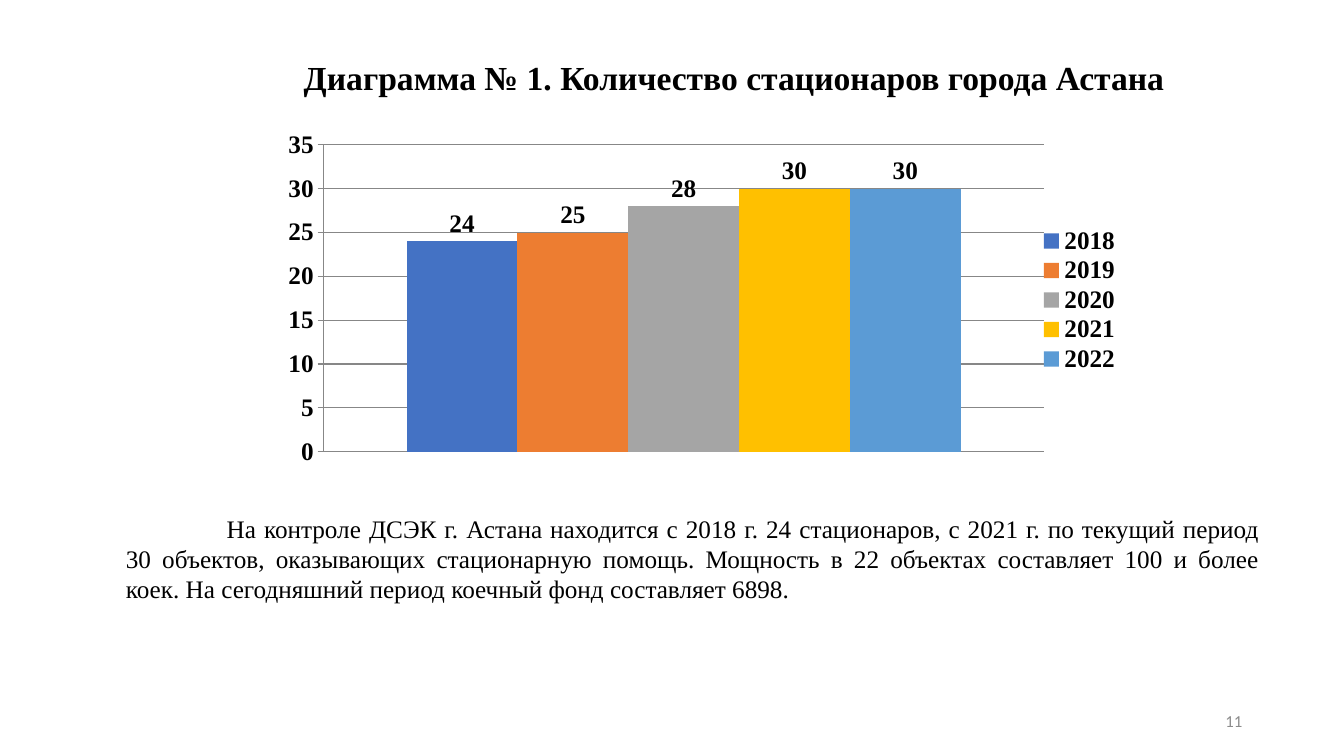
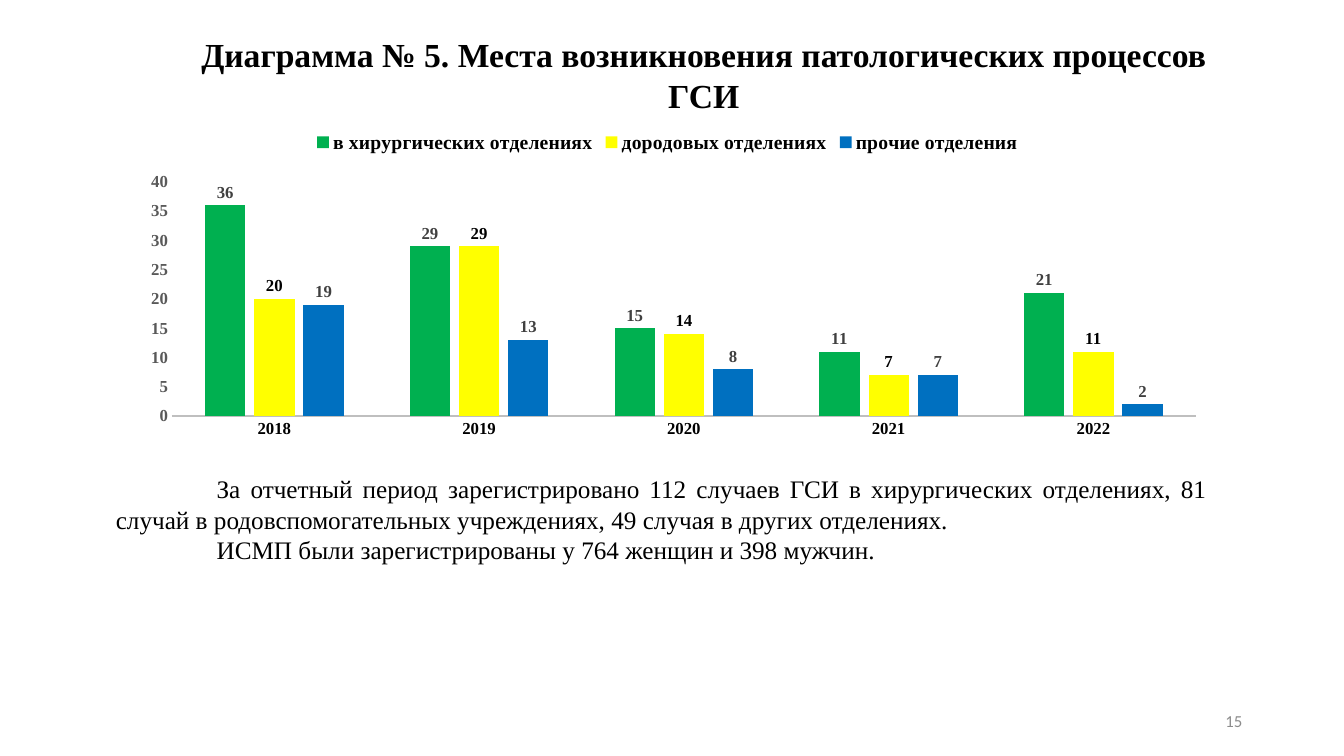
from pptx import Presentation
from pptx.chart.data import CategoryChartData
from pptx.dml.color import RGBColor
from pptx.enum.chart import XL_CHART_TYPE, XL_LABEL_POSITION, XL_LEGEND_POSITION, XL_TICK_MARK
from pptx.enum.text import MSO_ANCHOR, MSO_AUTO_SIZE, PP_ALIGN
from pptx.oxml.ns import qn
from pptx.util import Inches, Pt
from lxml.etree import SubElement

COLORS = {
    "black": "000000", "label": "404040", "axis_text": "595959", "page": "8C8C8C",
    "grid": "878787", "axis": "BFBFBF",
    "azure": "4472C4", "orange": "ED7D31", "silver": "A5A5A5", "gold": "FFC000",
    "sky": "5B9BD5", "green": "00B050", "yellow": "FFFF00", "blue": "0070C0",
}
SERIF = "Times New Roman"
SANS = "Calibri"
PAGE_BOX = (9.42, 6.95, 3, 0.4)

SLIDES = [
    {
        "title": "Диаграмма № 1. Количество стационаров города Астана",
        "title_box": (1, 0.52, 12.07, 0.91),
        "title_indent": 0.49,
        "body": [
            "На контроле ДСЭК г. Астана находится с 2018 г. 24 стационаров, с 2021 г. "
            "по текущий период 30 объектов, оказывающих стационарную помощь. Мощность "
            "в 22 объектах составляет 100 и более коек. На сегодняшний период коечный "
            "фонд составляет 6898.",
        ],
        "body_box": (1.15, 5.04, 11.44, 1.01),
        "page": "11",
        "chart": {
            "box": (2.68, 1.23, 8.82, 3.46),
            "categories": ["1"],
            "series": [
                ("2018", [24], "azure", "black"),
                ("2019", [25], "orange", "black"),
                ("2020", [28], "silver", "black"),
                ("2021", [30], "gold", "black"),
                ("2022", [30], "sky", "black"),
            ],
            "gap": 150, "overlap": 0, "grid": True, "show_categories": False,
            "size": 18, "legend_size": 18, "value_color": "black",
            "legend": XL_LEGEND_POSITION.RIGHT,
            "plot_area": (0.06, 0.06, 0.81, 0.88),
            "legend_area": (0.86, 0.29, 0.1, 0.43),
        },
    },
    {
        "title": "Диаграмма № 5. Места возникновения патологических процессов ГСИ",
        "title_box": (1.73, 0.29, 10.5, 0.91),
        "title_indent": 0,
        "body": [
            "За отчетный период зарегистрировано 112 случаев ГСИ в хирургических "
            "отделениях, 81 случай в родовспомогательных учреждениях, 49 случая "
            "в других отделениях.",
            "ИСМП были зарегистрированы у 764 женщин и 398 мужчин.",
        ],
        "body_box": (1.05, 4.65, 11.02, 1.01),
        "page": "15",
        "chart": {
            "box": (1.16, 1.19, 10.92, 3.23),
            "categories": ["2018", "2019", "2020", "2021", "2022"],
            "series": [
                ("в хирургических отделениях", [36, 29, 15, 11, 21], "green", "label"),
                ("дородовых отделениях", [20, 29, 14, 7, 11], "yellow", "black"),
                ("прочие отделения", [19, 13, 8, 7, 2], "blue", "label"),
            ],
            "gap": 164, "overlap": -22, "grid": False, "show_categories": True,
            "size": 12, "legend_size": 14, "value_color": "axis_text",
            "legend": XL_LEGEND_POSITION.TOP,
            "plot_area": (0.05, 0.19, 0.93, 0.72),
            "legend_area": None,
        },
    },
]


def rgb(name):
    return RGBColor.from_string(COLORS[name])


def style_font(font, size, color="black", bold=False, name=SERIF):
    font.size = Pt(size)
    font.bold = bold
    font.name = name
    font.color.rgb = rgb(color)


def add_text(slide, box, paragraphs, size, align, indent=0, anchor=MSO_ANCHOR.TOP,
             fit=MSO_AUTO_SIZE.NONE, **font_style):
    frame = slide.shapes.add_textbox(*map(Inches, box)).text_frame
    frame.word_wrap = True
    frame.auto_size = fit
    frame.vertical_anchor = anchor
    for index, text in enumerate(paragraphs):
        paragraph = frame.paragraphs[0] if index == 0 else frame.add_paragraph()
        paragraph.alignment = align
        if indent:
            properties = paragraph._p.get_or_add_pPr()
            properties.set("marL", "0")
            properties.set("indent", str(Inches(indent)))
        run = paragraph.add_run()
        run.text = text
        style_font(run.font, size, **font_style)


def set_layout(parent, index, area, inner=False):
    for previous in parent.findall(qn("c:layout")):
        parent.remove(previous)
    layout = SubElement(parent, qn("c:layout"))
    parent.insert(index, layout)
    manual = SubElement(layout, qn("c:manualLayout"))
    settings = [("layoutTarget", "inner")] if inner else []
    settings += [("xMode", "edge"), ("yMode", "edge"), *zip("xywh", area)]
    for tag, value in settings:
        SubElement(manual, qn(f"c:{tag}")).set("val", str(value))


def add_column_chart(slide, content):
    data = CategoryChartData(number_format="0")
    data.categories = content["categories"]
    for name, values, _, _ in content["series"]:
        data.add_series(name, values)
    chart = slide.shapes.add_chart(
        XL_CHART_TYPE.COLUMN_CLUSTERED, *map(Inches, content["box"]), data).chart
    size = content["size"]
    chart.has_title = False
    style_font(chart.font, size, bold=True)

    plot = chart.plots[0]
    plot.vary_by_categories = False
    plot.gap_width = content["gap"]
    plot.overlap = content["overlap"]
    for series, (_, _, fill, label_color) in zip(plot.series, content["series"]):
        series.format.fill.solid()
        series.format.fill.fore_color.rgb = rgb(fill)
        labels = series.data_labels
        labels.show_value = True
        labels.position = XL_LABEL_POSITION.OUTSIDE_END
        style_font(labels.font, size, label_color, True)

    values = chart.value_axis
    style_font(values.tick_labels.font, size, content["value_color"], True)
    values.minimum_scale = 0
    values.major_unit = 5
    values.has_major_gridlines = content["grid"]
    if content["grid"]:
        for line in (values.format.line, values.major_gridlines.format.line):
            line.color.rgb = rgb("grid")
            line.width = Pt(0.75)
        values.major_tick_mark = XL_TICK_MARK.OUTSIDE
    else:
        values.format.line.fill.background()
        values.major_tick_mark = XL_TICK_MARK.NONE

    categories = chart.category_axis
    categories.visible = content["show_categories"]
    if content["show_categories"]:
        categories.major_tick_mark = XL_TICK_MARK.NONE
        categories.format.line.color.rgb = rgb("axis")
        categories.format.line.width = Pt(1.5)
        style_font(categories.tick_labels.font, size, bold=True)

    chart.has_legend = True
    legend = chart.legend
    legend.position = content["legend"]
    legend.include_in_layout = False
    style_font(legend.font, content["legend_size"], bold=True)
    set_layout(chart._chartSpace.chart.plotArea, 0, content["plot_area"], inner=True)
    if content["legend_area"]:
        set_layout(legend._element, 1, content["legend_area"])


def main():
    deck = Presentation()
    deck.slide_width = Inches(13.33)
    deck.slide_height = Inches(7.5)
    for content in SLIDES:
        slide = deck.slides.add_slide(deck.slide_layouts[6])
        add_column_chart(slide, content["chart"])
        add_text(slide, content["body_box"], content["body"], 18, PP_ALIGN.JUSTIFY,
                 indent=1, fit=MSO_AUTO_SIZE.SHAPE_TO_FIT_TEXT)
        add_text(slide, content["title_box"], [content["title"]], 24, PP_ALIGN.CENTER,
                 indent=content["title_indent"], bold=True)
        add_text(slide, PAGE_BOX, [content["page"]], 12, PP_ALIGN.RIGHT,
                 anchor=MSO_ANCHOR.MIDDLE, color="page", name=SANS)
    deck.save("out.pptx")


if __name__ == "__main__":
    main()
